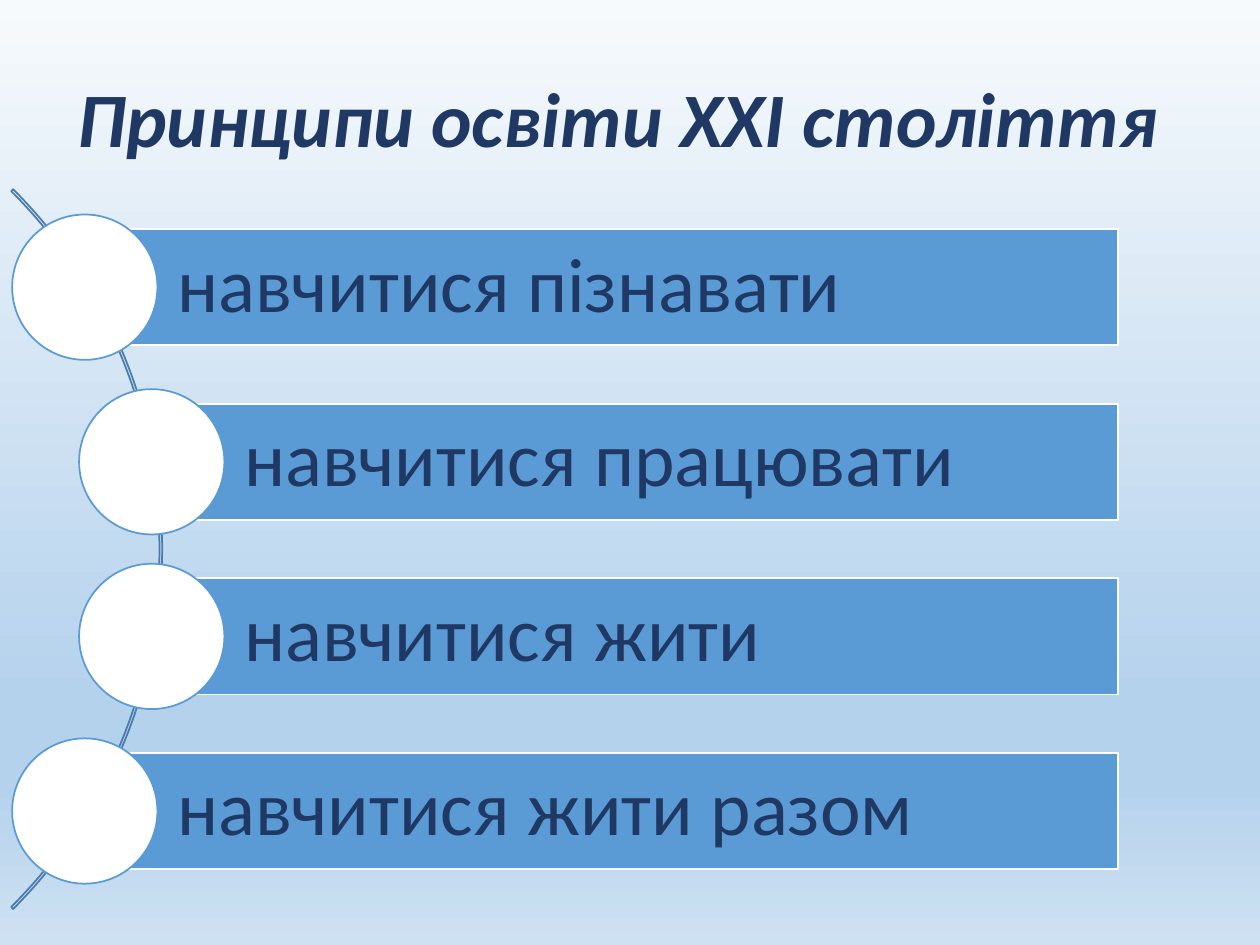
from lxml.etree import SubElement
from pptx import Presentation
from pptx.dml.color import RGBColor
from pptx.enum.shapes import MSO_SHAPE as Shape
from pptx.enum.text import MSO_ANCHOR as Anchor, MSO_AUTO_SIZE as AutoSize, PP_ALIGN as Align
from pptx.oxml.ns import qn
from pptx.util import Cm, Pt

NAVY = RGBColor(0x20, 0x38, 0x64)
BLUE = RGBColor(0x5B, 0x9B, 0xD5)
STEEL = RGBColor(0x49, 0x7C, 0xAB)
WHITE = RGBColor(0xFF, 0xFF, 0xFF)
SKY = [(0, RGBColor(0xF7, 0xFA, 0xFD)), (74, RGBColor(0xB5, 0xD2, 0xEC)),
       (83, RGBColor(0xB5, 0xD2, 0xEC)), (100, RGBColor(0xCE, 0xE1, 0xF2))]

PRINCIPLES = ["навчитися пізнавати", "навчитися працювати",
              "навчитися жити", "навчитися жити разом"]
CENTRES_X = [1.71, 3.06, 3.06, 1.71]
FIRST_Y, PITCH = 5.79, 3.52
BAR_RIGHT, BAR_HEIGHT, DIAMETER = 22.54, 2.34, 2.93


def write(tf, text, font="Calibri", size=44, color=NAVY, bold=False, italic=False,
          spacing=None, after=None):
    p = tf.paragraphs[0]
    p.alignment = Align.LEFT
    p.line_spacing = spacing
    p.space_after = after
    r = p.add_run()
    r.text = text
    r.font.name, r.font.size = font, Pt(size)
    r.font.bold, r.font.italic = bold, italic
    r.font.color.rgb = color


class Deck:
    def __init__(self, width, height):
        self.prs = Presentation()
        self.prs.slide_width, self.prs.slide_height = Cm(width), Cm(height)
        self.s = self.prs.slides.add_slide(self.prs.slide_layouts[6])

    def background(self, stops):
        """Fill the slide with a gradient running from top to bottom."""
        fill = self.s.background.fill
        fill.gradient()
        fill.gradient_angle = 270
        stop_list = self.s.element.find(".//" + qn("a:gsLst"))
        for stop in list(stop_list):
            stop_list.remove(stop)
        for percent, color in stops:
            stop = SubElement(stop_list, qn("a:gs"), pos=str(percent * 1000))
            SubElement(stop, qn("a:srgbClr"), val=str(color))

    def title(self, text, x, y, w, h):
        tf = self.s.shapes.add_textbox(Cm(x), Cm(y), Cm(w), Cm(h)).text_frame
        tf.word_wrap = False
        tf.auto_size = AutoSize.SHAPE_TO_FIT_TEXT
        write(tf, text, bold=True, italic=True)

    def shape(self, kind, x, y, w, h, line, fill=None):
        sp = self.s.shapes.add_shape(kind, Cm(x), Cm(y), Cm(w), Cm(h))
        sp.shadow.inherit = False
        if fill is None:
            sp.fill.background()
        else:
            sp.fill.solid()
            sp.fill.fore_color.rgb = fill
        sp.line.color.rgb = line
        sp.line.width = Pt(1)
        return sp

    def arc(self, x, y, size):
        sp = self.shape(Shape.BLOCK_ARC, x, y, size, size, STEEL)
        for i, value in enumerate((189, 27, 0.0027)):
            sp.adjustments[i] = value

    def bar(self, text, x, cy):
        sp = self.shape(Shape.RECTANGLE, x, cy - BAR_HEIGHT / 2,
                        BAR_RIGHT - x, BAR_HEIGHT, WHITE, BLUE)
        tf = sp.text_frame
        tf.word_wrap = True
        tf.vertical_anchor = Anchor.MIDDLE
        tf.margin_left = Cm(1.86)
        tf.margin_top = tf.margin_right = tf.margin_bottom = Cm(0.3)
        write(tf, text, spacing=0.9)

    def circle(self, cx, cy):
        self.shape(Shape.OVAL, cx - DIAMETER / 2, cy - DIAMETER / 2,
                   DIAMETER, DIAMETER, BLUE, WHITE)


def main():
    deck = Deck(25.4, 19.05)
    deck.background(SKY)
    deck.title("Принципи освіти ХХІ століття", 1.32, 1.3, 22.53, 2.13)
    deck.arc(-17.25, 0.81, 20.52)
    for i, (text, x) in enumerate(zip(PRINCIPLES, CENTRES_X)):
        y = FIRST_Y + i * PITCH
        deck.bar(text, x, y)
        deck.circle(x, y)
    deck.prs.save("out.pptx")


if __name__ == "__main__":
    main()
